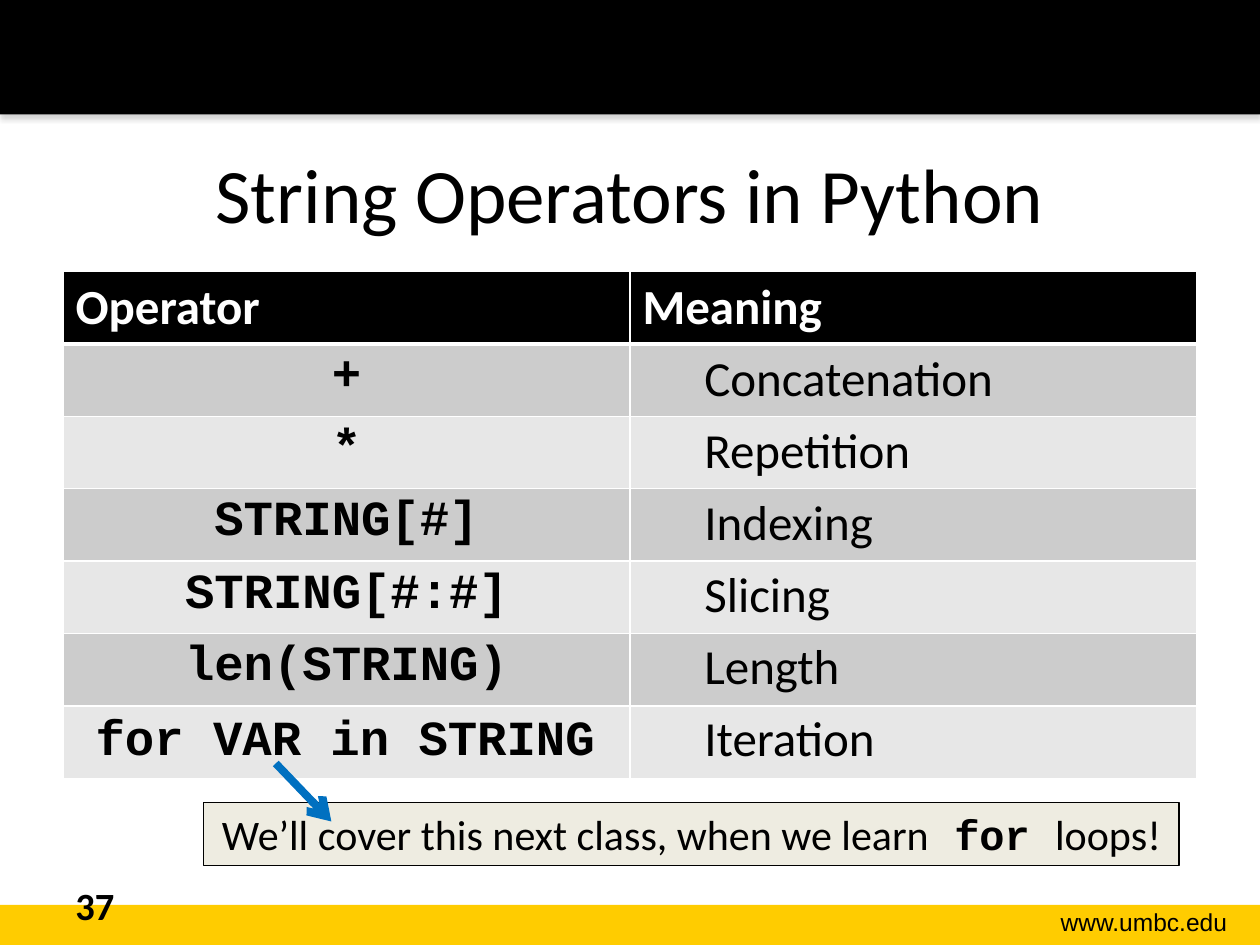
import pptx
import pptx.dml.color
import pptx.enum.shapes
import pptx.enum.text
import pptx.oxml
import pptx.oxml.ns
import pptx.util

Cm, Pt = pptx.util.Cm, pptx.util.Pt
ALIGN = pptx.enum.text.PP_ALIGN
ANCHOR = pptx.enum.text.MSO_ANCHOR
RECTANGLE = pptx.enum.shapes.MSO_SHAPE.RECTANGLE
NAMESPACE = pptx.oxml.ns.nsdecls("a")

COLORS = {
    "black": "000000", "white": "FFFFFF", "gold": "FFCC00",
    "dark band": "CCCCCC", "light band": "E7E7E7",
    "note": "EEECE1", "arrow": "0070C0", "shadow": "808080",
}


def color(name):
    return pptx.dml.color.RGBColor.from_string(COLORS[name])


def write(frame, text, size, font="Calibri", bold=False, align=ALIGN.LEFT, ink="black"):
    """Fill a text frame or table cell frame with one styled paragraph."""
    frame.word_wrap = True
    para = frame.paragraphs[0]
    para.text = text
    para.alignment = align
    para.font.name = font
    para.font.size = Pt(size)
    para.font.bold = bold
    para.font.color.rgb = color(ink)


deck = pptx.Presentation()
deck.slide_width, deck.slide_height = Cm(25.4), Cm(19.05)
page = deck.slides.add_slide(deck.slide_layouts[6])

# Footer and header bars
for top, height, fill in [(18.24, 0.81, "gold"), (0, 2.31, "black")]:
    bar = page.shapes.add_shape(RECTANGLE, 0, Cm(top), Cm(25.4), Cm(height))
    bar.shadow.inherit = False
    bar.fill.solid()
    bar.fill.fore_color.rgb = color(fill)
    bar.line.fill.background()
header_effects = bar._element.spPr.find(pptx.oxml.ns.qn("a:effectLst"))
header_effects.append(pptx.oxml.parse_xml(
    f'<a:outerShdw {NAMESPACE} blurRad="{Pt(3.1)}" dist="{Pt(1.8)}" dir="5400000" rotWithShape="0">'
    f'<a:srgbClr val="{COLORS["shadow"]}"><a:alpha val="35000"/></a:srgbClr></a:outerShdw>'))

# Operator table
operators = ["+", "*", "STRING[#]", "STRING[#:#]", "len(STRING)"]
row_count = len(operators) + 2
table = page.shapes.add_table(
    row_count, 2, Cm(1.27), Cm(5.47), Cm(22.86), Cm(1.46 * row_count)).table
for row in range(row_count):
    table.rows[row].height = Cm(1.46)
    for column in range(2):
        cell = table.cell(row, column)
        for side in "LRTB":
            under_header = (row, side) in [(0, "B"), (1, "T")]
            cell._tc.get_or_add_tcPr().append(pptx.oxml.parse_xml(
                f'<a:ln{side} {NAMESPACE} w="{Pt(3 if under_header else 1)}"><a:solidFill>'
                f'<a:srgbClr val="{COLORS["white"]}"/></a:solidFill></a:ln{side}>'))
        cell.fill.solid()
        band = "black" if row == 0 else "dark band" if row % 2 else "light band"
        cell.fill.fore_color.rgb = color(band)
for column, heading in enumerate(["Operator", "Meaning"]):
    write(table.cell(0, column).text_frame, heading, 28, bold=True, ink="white")
for row, operator in enumerate(operators, start=1):
    write(table.cell(row, 0).text_frame, operator, 28, "Courier New", True, ALIGN.CENTER)

# Free-standing text: left, top, width, height, text, size, font, bold, alignment, anchor
labels = [
    (19.94, 18.16, 5.05, 0.86, "www.umbc.edu", 14, "Arial", False, ALIGN.RIGHT, ANCHOR.TOP),
    (1.27, 2.29, 22.86, 3.18, "String Operators in Python", 44, "Calibri", False,
     ALIGN.CENTER, ANCHOR.MIDDLE),
    (1.27, 17.65, 5.92, 1.02, "37", 22, "Calibri", True, ALIGN.LEFT, ANCHOR.TOP),
    (1.68, 14.07, 10.69, 1.55, "for VAR in STRING", 28, "Courier New", True,
     ALIGN.LEFT, ANCHOR.MIDDLE),
]
meanings = ["Concatenation", "Repetition", "Indexing", "Slicing", "Length", "Iteration"]
for index, meaning in enumerate(meanings):
    labels.append((13.95, 6.83 + 1.45 * index, 6.76, 1.55, meaning, 28, "Calibri", False,
                   ALIGN.LEFT, ANCHOR.MIDDLE))
for left, top, width, height, text, size, font, bold, align, anchor in labels:
    box = page.shapes.add_textbox(Cm(left), Cm(top), Cm(width), Cm(height))
    box.text_frame.vertical_anchor = anchor
    write(box.text_frame, text, size, font, bold, align)

# Note about the for loop
note = page.shapes.add_shape(RECTANGLE, Cm(4.11), Cm(16.18), Cm(19.66), Cm(1.27))
note.shadow.inherit = False
note.fill.solid()
note.fill.fore_color.rgb = color("note")
note.line.color.rgb = color("black")
note.line.width = Pt(0.75)
note.text_frame.vertical_anchor = ANCHOR.TOP
write(note.text_frame, "We’ll cover this next class, when we learn", 24, align=ALIGN.CENTER)
para = note.text_frame.paragraphs[0]
keyword = para.add_run()
keyword.text = " for "
keyword.font.name = "Courier New"
keyword.font.bold = True
para.add_run().text = "loops!"

arrow = page.shapes.add_connector(
    pptx.enum.shapes.MSO_CONNECTOR.STRAIGHT, Cm(5.56), Cm(15.39), Cm(6.68), Cm(16.56))
arrow.line.color.rgb = color("arrow")
arrow.line.width = Pt(4.5)
arrow.line._get_or_add_ln().append(
    pptx.oxml.parse_xml(f'<a:tailEnd {NAMESPACE} type="arrow"/>'))
arrow._element.spPr.append(pptx.oxml.parse_xml(f"<a:effectLst {NAMESPACE}/>"))

deck.save("out.pptx")
